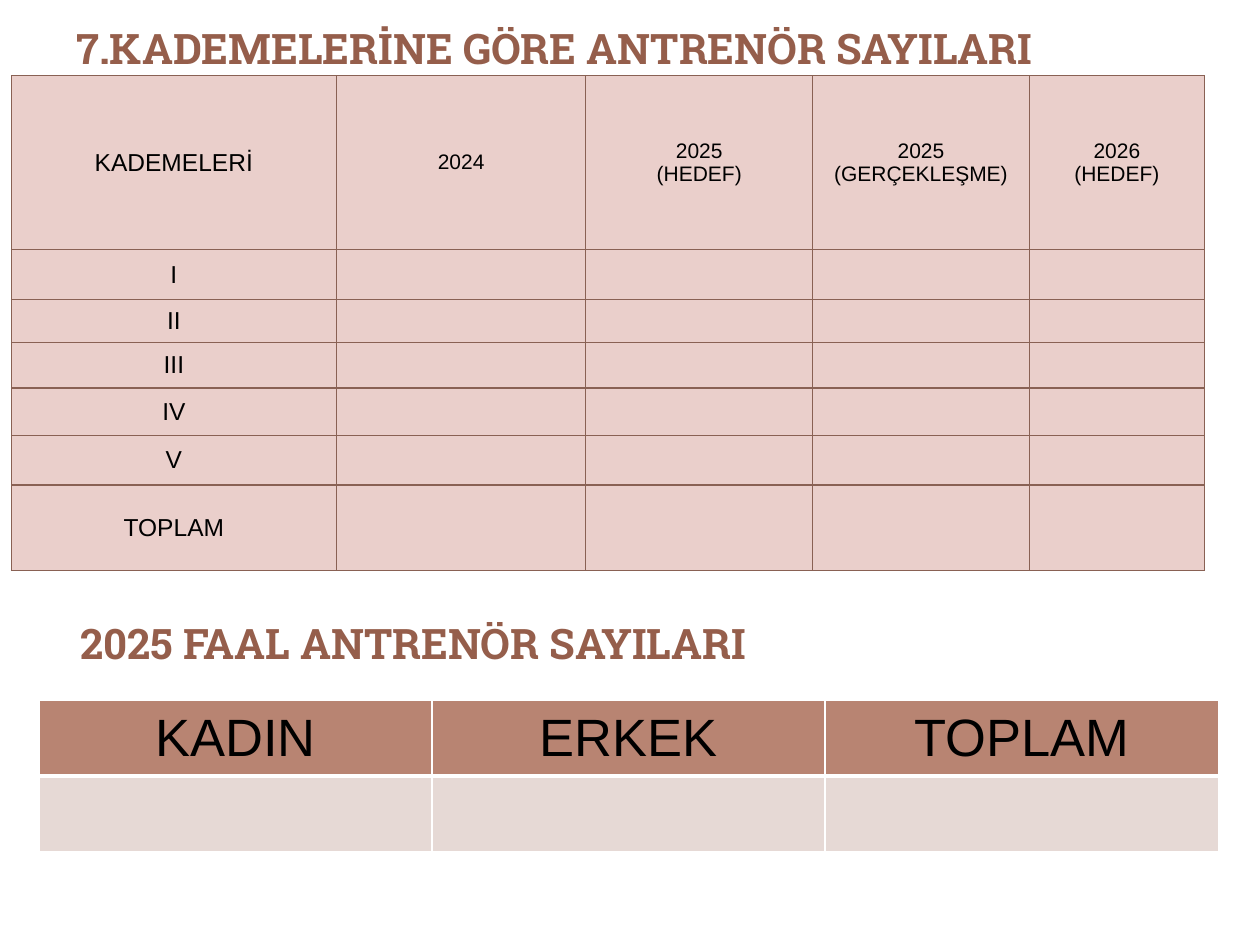
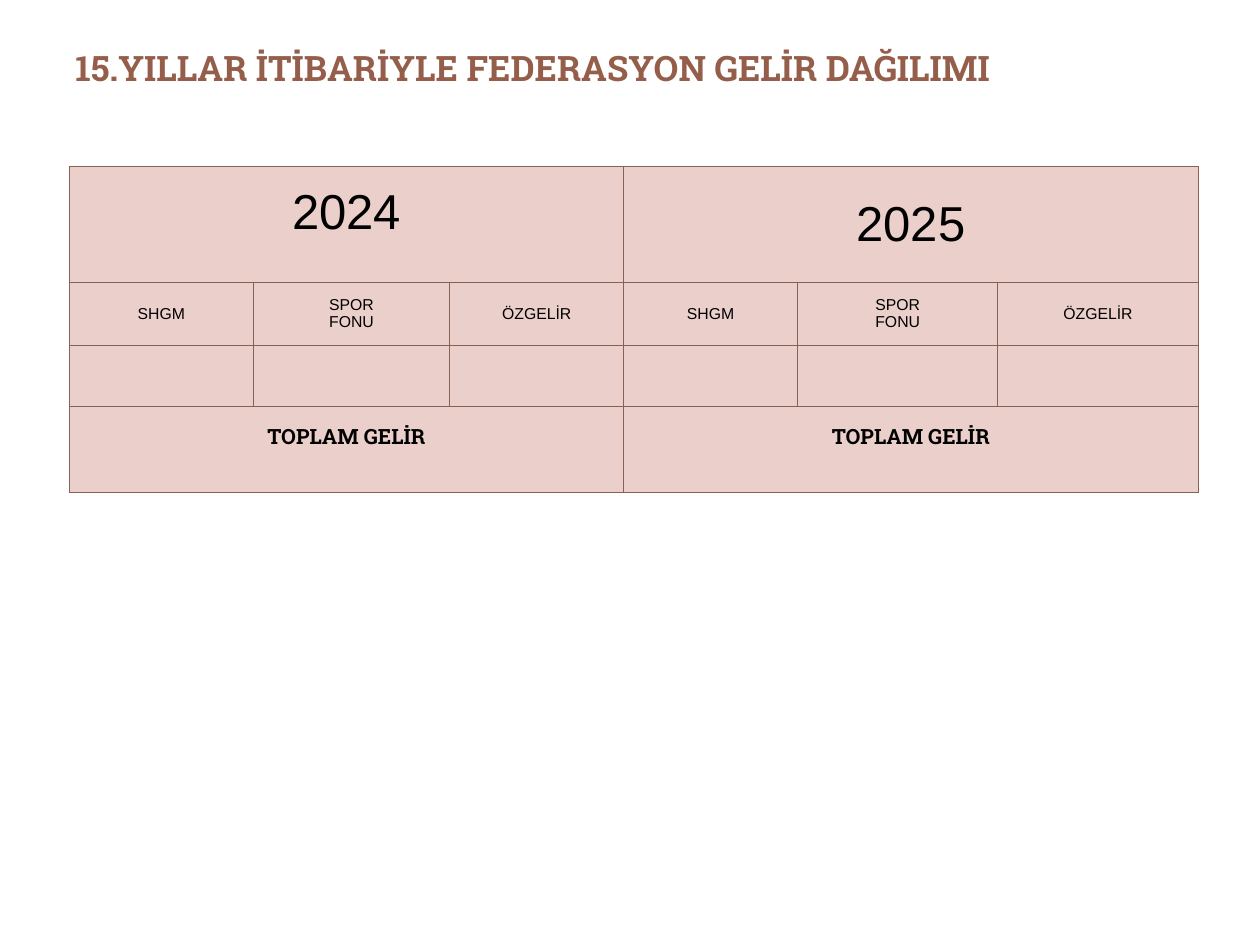
from lxml import etree
from pptx import Presentation
from pptx.dml.color import RGBColor
from pptx.enum.text import MSO_ANCHOR, PP_ALIGN
from pptx.oxml.ns import qn
from pptx.util import Inches, Pt

TOP, MID = MSO_ANCHOR.TOP, MSO_ANCHOR.MIDDLE
LEFT, MID_X = PP_ALIGN.LEFT, PP_ALIGN.CENTER

HEX = {
    "title": "955E4B",
    "text": "000000",
    "line": "896154",
    "pink": "EACFCB",
    "head": "B88472",
    "pale": "E6D9D5",
    "white": "FFFFFF",
}
SLAB, SANS = "Roboto Slab", "Arial"


class Deck:
    def __init__(self):
        self.prs = Presentation()
        self.prs.slide_width, self.prs.slide_height = Inches(10), Inches(7.5)
        self.slide = None

    def page(self):
        self.slide = self.prs.slides.add_slide(self.prs.slide_layouts[6])
        fill = self.slide.background.fill
        fill.solid()
        fill.fore_color.rgb = RGBColor.from_string(HEX["white"])

    def put_text(self, frame, text, size, font, color, align, bold=False):
        """One paragraph for each line of the text."""
        for i, line in enumerate(text.split("\n")):
            para = frame.paragraphs[0] if i == 0 else frame.add_paragraph()
            para.alignment = align
            run = para.add_run()
            run.text = line
            run.font.size, run.font.name, run.font.bold = Pt(size), font, bold
            run.font.color.rgb = RGBColor.from_string(HEX[color])

    def title(self, at, text, size, left=0.1, top=0.05):
        box = self.slide.shapes.add_textbox(*map(Inches, at))
        frame = box.text_frame
        frame.word_wrap, frame.vertical_anchor = True, TOP
        frame.margin_left, frame.margin_top = Inches(left), Inches(top)
        self.put_text(frame, text, size, SLAB, "title", LEFT, True)

    def table(self, left, top, cols, rows):
        shape = self.slide.shapes.add_table(
            len(rows), len(cols), Inches(left), Inches(top),
            Inches(sum(cols)), Inches(sum(rows)))
        grid = shape.table
        grid.first_row = grid.horz_banding = False
        for col, width in zip(grid.columns, cols):
            col.width = Inches(width)
        for row, height in zip(grid.rows, rows):
            row.height = Inches(height)
        return grid

    def paint(self, cells, fill, line, width, **sides):
        """Fill cells and rule their edges; sides overrides a width."""
        for cell in cells:
            cell.vertical_anchor = MID
            cell.margin_top = cell.margin_bottom = 0
            props = cell._tc.get_or_add_tcPr()
            for side in "LRTB":
                points = sides.get(side, width)
                edge = etree.SubElement(props, qn(f"a:ln{side}"), w=str(Pt(points)))
                solid = etree.SubElement(edge, qn("a:solidFill"))
                etree.SubElement(solid, qn("a:srgbClr"), val=HEX[line])
            cell.fill.solid()
            cell.fill.fore_color.rgb = RGBColor.from_string(HEX[fill])

    def label(self, cell, text, size, font=SANS, bold=False, lift=0):
        cell.margin_bottom = Inches(lift)
        self.put_text(cell.text_frame, text, size, font, "text", MID_X, bold)


def coaches(deck):
    deck.page()
    deck.title((0.51, 0.13, 9.3, 1.25), "7.KADEMELERİNE GÖRE ANTRENÖR SAYILARI", 24)

    # Coaches by level
    grid = deck.table(0.09, 0.6, [2.58, 1.98, 1.8, 1.72, 1.39],
                      [1.38, 0.4, 0.34, 0.36, 0.38, 0.39, 0.68])
    deck.paint(grid.iter_cells(), "pink", "line", 0.75)
    levels = ["KADEMELERİ", "I", "II", "III", "IV", "V", "TOPLAM"]
    for row, text in enumerate(levels):
        deck.label(grid.cell(row, 0), text, 14)
    years = ["2024", "2025\n(HEDEF)", "2025\n(GERÇEKLEŞME)", "2026\n(HEDEF)"]
    for col, text in enumerate(years, 1):
        deck.label(grid.cell(0, col), text, 12)

    # Active coaches
    deck.title((0.31, 4.85, 9.47, 0.5), "2025 FAAL ANTRENÖR SAYILARI", 24, left=0.33)
    grid = deck.table(0.31, 5.56, [3.12] * 3, [0.6] * 2)
    heads = ["KADIN", "ERKEK", "TOPLAM"]
    deck.paint([grid.cell(0, col) for col in range(3)], "head", "white", 1, B=3)
    deck.paint([grid.cell(1, col) for col in range(3)], "pale", "white", 1, T=3)
    for col, text in enumerate(heads):
        deck.label(grid.cell(0, col), text, 30)


def income(deck):
    deck.page()
    deck.title((0.5, 0, 9, 0.93), "15.YILLAR İTİBARİYLE FEDERASYON GELİR DAĞILIMI",
               20, top=0.37)

    # Income by year and source
    grid = deck.table(0.55, 1.32, [1.46, 1.56, 1.38, 1.38, 1.59, 1.59],
                      [0.92, 0.5, 0.49, 0.68])
    deck.paint(grid.iter_cells(), "pink", "line", 0.75)
    for start, year, lift in ((0, "2024", 0.18), (3, "2025", 0)):
        for row in (0, 3):
            grid.cell(row, start).merge(grid.cell(row, start + 2))
        deck.label(grid.cell(0, start), year, 28, lift=lift)
        for col, text in enumerate(["SHGM", "SPOR\nFONU", "ÖZGELİR"], start):
            deck.label(grid.cell(1, col), text, 9)
        deck.label(grid.cell(3, start), "TOPLAM GELİR", 12, SLAB, True, lift=0.22)


def main():
    deck = Deck()
    coaches(deck)
    income(deck)
    deck.prs.save("out.pptx")


if __name__ == "__main__":
    main()
